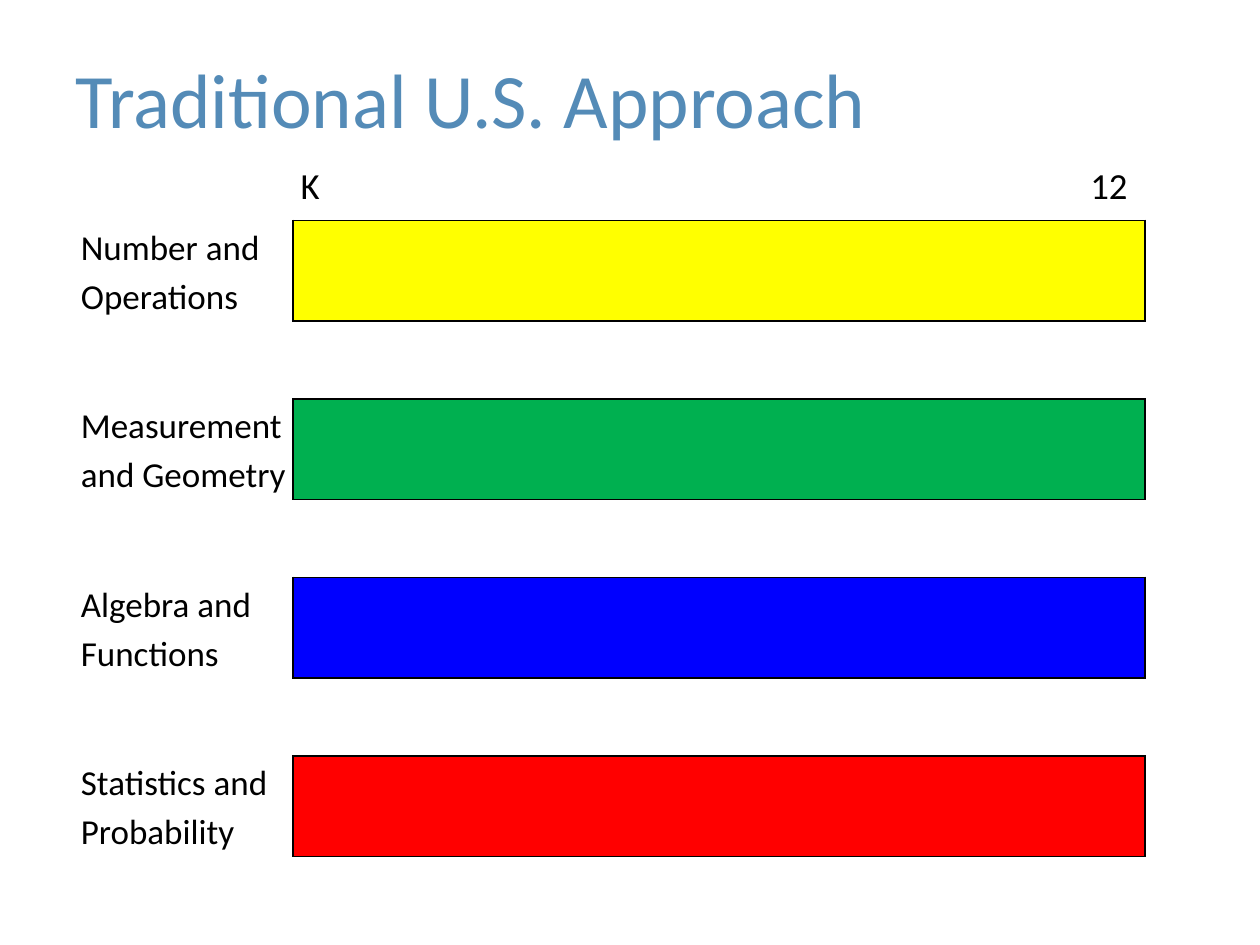
from typing import NamedTuple

from lxml import etree
from pptx import Presentation
from pptx.dml.color import RGBColor
from pptx.enum.text import MSO_ANCHOR
from pptx.oxml.ns import qn
from pptx.table import _Cell
from pptx.util import Cm, Pt

MIDDLE = MSO_ANCHOR.MIDDLE

FONT = "Calibri"
BLACK = RGBColor(0x00, 0x00, 0x00)
TITLE_BLUE = RGBColor(0x54, 0x8B, 0xB7)
YELLOW = RGBColor(0xFF, 0xFF, 0x00)
GREEN = RGBColor(0x00, 0xB0, 0x50)
BLUE = RGBColor(0x00, 0x00, 0xFF)
RED = RGBColor(0xFF, 0x00, 0x00)

LABEL_WIDTH, BAR_WIDTH = Cm(4.43), Cm(17.17)
HEADER_HEIGHT, BAR_HEIGHT, GAP_HEIGHT = Cm(1.27), Cm(2.03), Cm(1.57)
GRADE_TAB = Cm(16.67)
PLAIN_TABLE_STYLE = "{2D5ABB26-0587-4C30-8999-92F81FD0307C}"


class Strand(NamedTuple):
    label: str
    color: RGBColor


STRANDS = [
    Strand("Number and Operations", YELLOW),
    Strand("Measurement and Geometry", GREEN),
    Strand("Algebra and Functions", BLUE),
    Strand("Statistics and Probability", RED),
]


def set_borders(cell: _Cell, sides: str) -> None:
    """Draw black one-point lines on the sides named by L, R, T and B."""
    properties = cell._tc.get_or_add_tcPr()
    for side in sides:
        line = etree.SubElement(properties, qn(f"a:ln{side}"), w=str(Pt(1)))
        fill = etree.SubElement(line, qn("a:solidFill"))
        etree.SubElement(fill, qn("a:srgbClr"), val=str(BLACK))


def write_cell(cell: _Cell, text: str, size: float) -> None:
    cell.margin_left, cell.margin_right = Cm(0.15), Cm(0.1)
    cell.margin_top = cell.margin_bottom = 0
    cell.text = text
    para = cell.text_frame.paragraphs[0]
    para.line_spacing = 1.15
    para.font.name = FONT
    para.font.size = Pt(size)
    para.font.color.rgb = BLACK


def add_right_tab(cell: _Cell, position: int) -> None:
    properties = cell.text_frame.paragraphs[0]._p.get_or_add_pPr()
    tabs = etree.Element(qn("a:tabLst"))
    etree.SubElement(tabs, qn("a:tab"), pos=str(position), algn="r")
    properties.find(qn("a:defRPr")).addprevious(tabs)


def add_title(page, text: str) -> None:
    box = page.shapes.add_textbox(Cm(1.27), Cm(0.76), Cm(22.86), Cm(2.41))
    frame = box.text_frame
    frame.word_wrap = True
    frame.vertical_anchor = MIDDLE
    frame.text = text
    font = frame.paragraphs[0].font
    font.name, font.size = FONT, Pt(44)
    font.color.rgb = TITLE_BLUE


def add_strand_table(page, strands: list[Strand]) -> None:
    # A header, then strand rows with a gap row between each pair
    heights = [HEADER_HEIGHT] + [BAR_HEIGHT, GAP_HEIGHT] * len(strands)
    heights.pop()
    table = page.shapes.add_table(
        len(heights), 2, Cm(1.48), Cm(3.17), LABEL_WIDTH + BAR_WIDTH, sum(heights)
    ).table
    table.first_row = table.horz_banding = False
    table._tbl.tblPr.find(qn("a:tableStyleId")).text = PLAIN_TABLE_STYLE
    table.columns[0].width, table.columns[1].width = LABEL_WIDTH, BAR_WIDTH
    for row, height in zip(table.rows, heights):
        row.height = height

    # Grade range
    grades = table.cell(0, 1)
    write_cell(grades, "K\t12", 21)
    add_right_tab(grades, GRADE_TAB)
    set_borders(grades, "B")

    # Labels and bars
    for index, strand in enumerate(strands):
        row = 2 * index + 1
        label, bar = table.cell(row, 0), table.cell(row, 1)
        write_cell(label, strand.label, 20)
        set_borders(label, "R")
        set_borders(bar, "LRTB")
        bar.fill.solid()
        bar.fill.fore_color.rgb = strand.color
        if index > 0:
            set_borders(table.cell(row - 1, 1), "TB")


def main() -> None:
    deck = Presentation()
    deck.slide_width, deck.slide_height = Cm(25.4), Cm(19.05)
    page = deck.slides.add_slide(deck.slide_layouts[6])
    add_strand_table(page, STRANDS)
    add_title(page, "Traditional U.S. Approach")
    deck.save("out.pptx")


if __name__ == "__main__":
    main()
